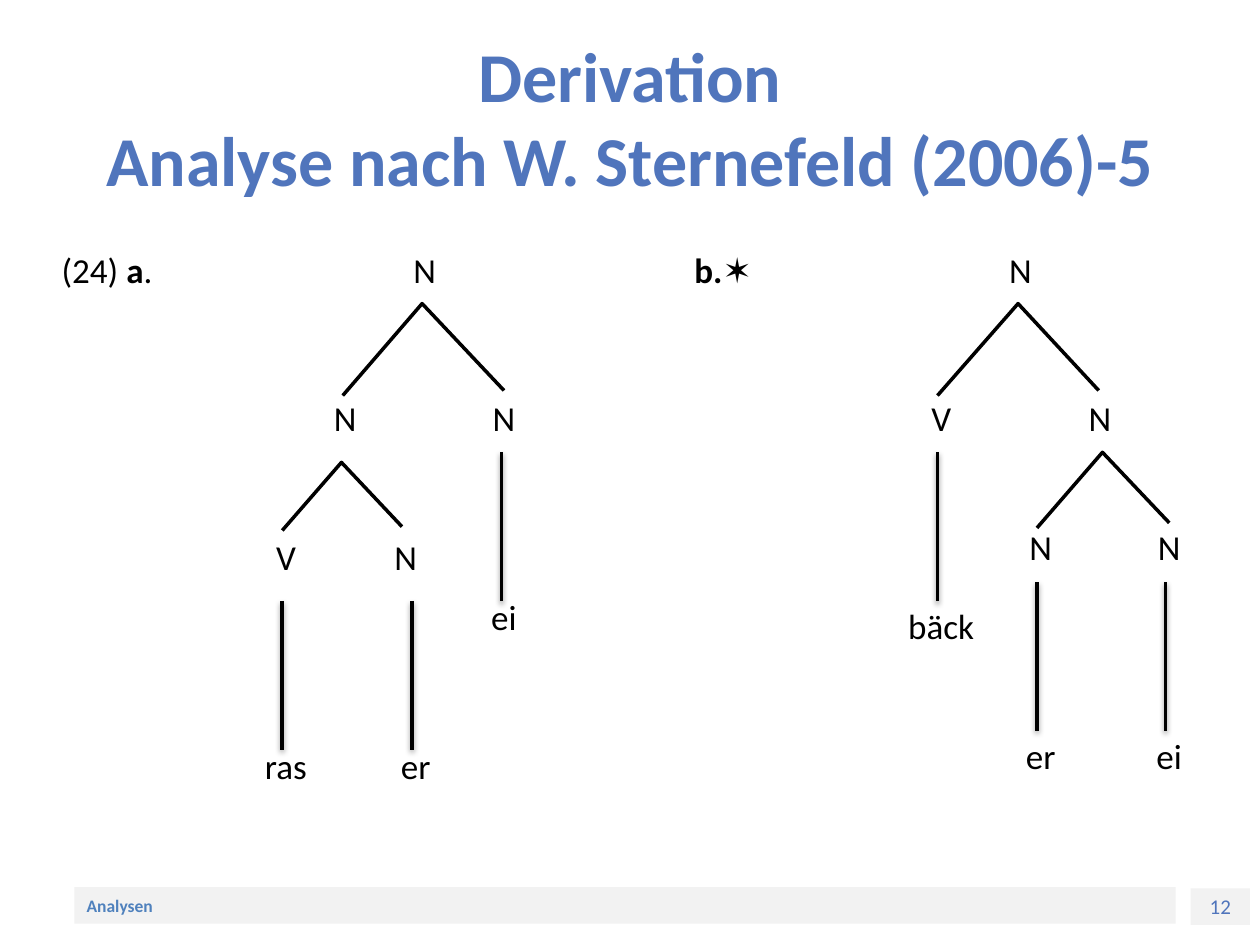
from dataclasses import dataclass
from typing import Any

from lxml import etree
from pptx import Presentation
from pptx import util as u
from pptx.dml import color
from pptx.enum import shapes, text
from pptx.oxml import ns

SCALE = 9144


@dataclass(frozen=True)
class Theme:
    face: str = "Calibri"
    star: str = "Arial"
    ink: str = "000000"
    title: str = "5075BC"
    foot: str = "4F81BD"
    band: str = "F2F2F2"
    head: int = 40
    body: int = 20
    page: int = 12
    note: int = 10
    line: int = 2


@dataclass(frozen=True)
class Box:
    x: int
    y: int
    w: int
    h: int


@dataclass(frozen=True)
class Word:
    text: str
    bold: bool = False
    face: str = Theme.face


@dataclass(frozen=True)
class Label:
    x: int
    y: int
    words: tuple[Word, ...]


@dataclass(frozen=True)
class Fork:
    left: tuple[int, int]
    top: tuple[int, int]
    right: tuple[int, int]


@dataclass(frozen=True)
class Stem:
    x: int
    y: int


THEME = Theme()
CELL_W, CELL_H, STEM_H = 100, 55, 118

HEADS = (
    Label(35, 186, (Word("(24)"), Word(" a", True), Word("."))),
    Label(524, 186, (Word("b.", True), Word("✶", True, THEME.star))),
)
NODES = (
    (287, 186, "N"), (224, 304, "N"), (350, 304, "N"),
    (177, 414, "V"), (272, 414, "N"), (350, 462, "ei"),
    (177, 580, "ras"), (280, 580, "er"),
    (760, 186, "N"), (697, 304, "V"), (823, 304, "N"),
    (776, 406, "N"), (878, 406, "N"), (697, 469, "bäck"),
    (776, 572, "er"), (878, 572, "ei"),
)
STEMS = (
    Stem(398, 359), Stem(224, 477), Stem(327, 477),
    Stem(744, 359), Stem(823, 462), Stem(925, 462),
)
FORKS = (
    Fork((272, 314), (335, 241), (400, 310)),
    Fork((224, 421), (271, 367), (319, 418)),
    Fork((744, 314), (808, 241), (872, 310)),
    Fork((823, 419), (875, 359), (928, 415)),
)


def emu(*px: int) -> list[u.Emu]:
    return [u.Emu(n * SCALE) for n in px]


def rgb(code: str) -> color.RGBColor:
    return color.RGBColor.from_string(code)


def style(run: Any, size: int, tint: str, bold: bool = False,
          face: str = THEME.face) -> None:
    run.font.name = face
    run.font.size = u.Pt(size)
    run.font.bold = bold
    run.font.color.rgb = rgb(tint)


def stroke(line: Any) -> None:
    line.color.rgb = rgb(THEME.ink)
    line.width = u.Pt(THEME.line)


def fill_text(shape: Any, words: str, size: int, tint: str, bold: bool,
              align: text.PP_ALIGN) -> None:
    frame = shape.text_frame
    frame.text = words
    frame.word_wrap = True
    frame.vertical_anchor = text.MSO_ANCHOR.MIDDLE
    para = frame.paragraphs[0]
    para.alignment = align
    for run in para.runs:
        style(run, size, tint, bold)


def draw_band(slide: Any, box: Box, words: str, size: int, tint: str,
              bold: bool, align: text.PP_ALIGN) -> None:
    band = slide.shapes.add_shape(
        shapes.MSO_SHAPE.RECTANGLE, *emu(box.x, box.y, box.w, box.h))
    band.shadow.inherit = False
    band.fill.solid()
    band.fill.fore_color.rgb = rgb(THEME.band)
    band.line.fill.background()
    fill_text(band, words, size, tint, bold, align)


def draw_title(slide: Any, box: Box, words: str) -> None:
    title = slide.shapes.add_textbox(*emu(box.x, box.y, box.w, box.h))
    fill_text(title, words, THEME.head, THEME.title, True,
              text.PP_ALIGN.CENTER)


def draw_label(slide: Any, label: Label) -> None:
    box = slide.shapes.add_textbox(*emu(label.x, label.y, CELL_W, CELL_H))
    frame = box.text_frame
    frame.word_wrap = False
    frame.vertical_anchor = text.MSO_ANCHOR.MIDDLE
    para = frame.paragraphs[0]
    para.alignment = text.PP_ALIGN.CENTER
    for word in label.words:
        run = para.add_run()
        run.text = word.text
        style(run, THEME.body, THEME.ink, word.bold, word.face)


def draw_stem(slide: Any, stem: Stem) -> None:
    line = slide.shapes.add_connector(
        shapes.MSO_CONNECTOR.STRAIGHT,
        *emu(stem.x, stem.y, stem.x, stem.y + STEM_H))
    stroke(line.line)
    glow = etree.SubElement(line._element.spPr, ns.qn("a:effectLst"))
    shade = etree.SubElement(glow, ns.qn("a:outerShdw"), blurRad="40000",
                             dist="20000", dir="5400000", rotWithShape="0")
    tint = etree.SubElement(shade, ns.qn("a:srgbClr"), val=THEME.ink)
    etree.SubElement(tint, ns.qn("a:alpha"), val="38000")


def draw_fork(slide: Any, fork: Fork) -> None:
    pen = slide.shapes.build_freeform(*fork.left, scale=SCALE)
    pen.add_line_segments([fork.top, fork.right], close=False)
    shape = pen.convert_to_shape()
    shape.shadow.inherit = False
    shape.fill.background()
    stroke(shape.line)


def main() -> None:
    deck = Presentation()
    deck.slide_width, deck.slide_height = emu(1000, 750)
    slide = deck.slides.add_slide(deck.slide_layouts[6])
    draw_band(slide, Box(945, 705, 47, 29), "12", THEME.page, THEME.title,
              False, text.PP_ALIGN.CENTER)
    draw_band(slide, Box(59, 704, 874, 29), "Analysen", THEME.note,
              THEME.foot, True, text.PP_ALIGN.LEFT)
    draw_title(slide, Box(50, 30, 900, 125),
               "Derivation\vAnalyse nach W. Sternefeld (2006)-5")
    for head in HEADS:
        draw_label(slide, head)
    for x, y, word in NODES:
        draw_label(slide, Label(x, y, (Word(word),)))
    for stem in STEMS:
        draw_stem(slide, stem)
    for fork in FORKS:
        draw_fork(slide, fork)
    deck.save("out.pptx")


if __name__ == "__main__":
    main()
